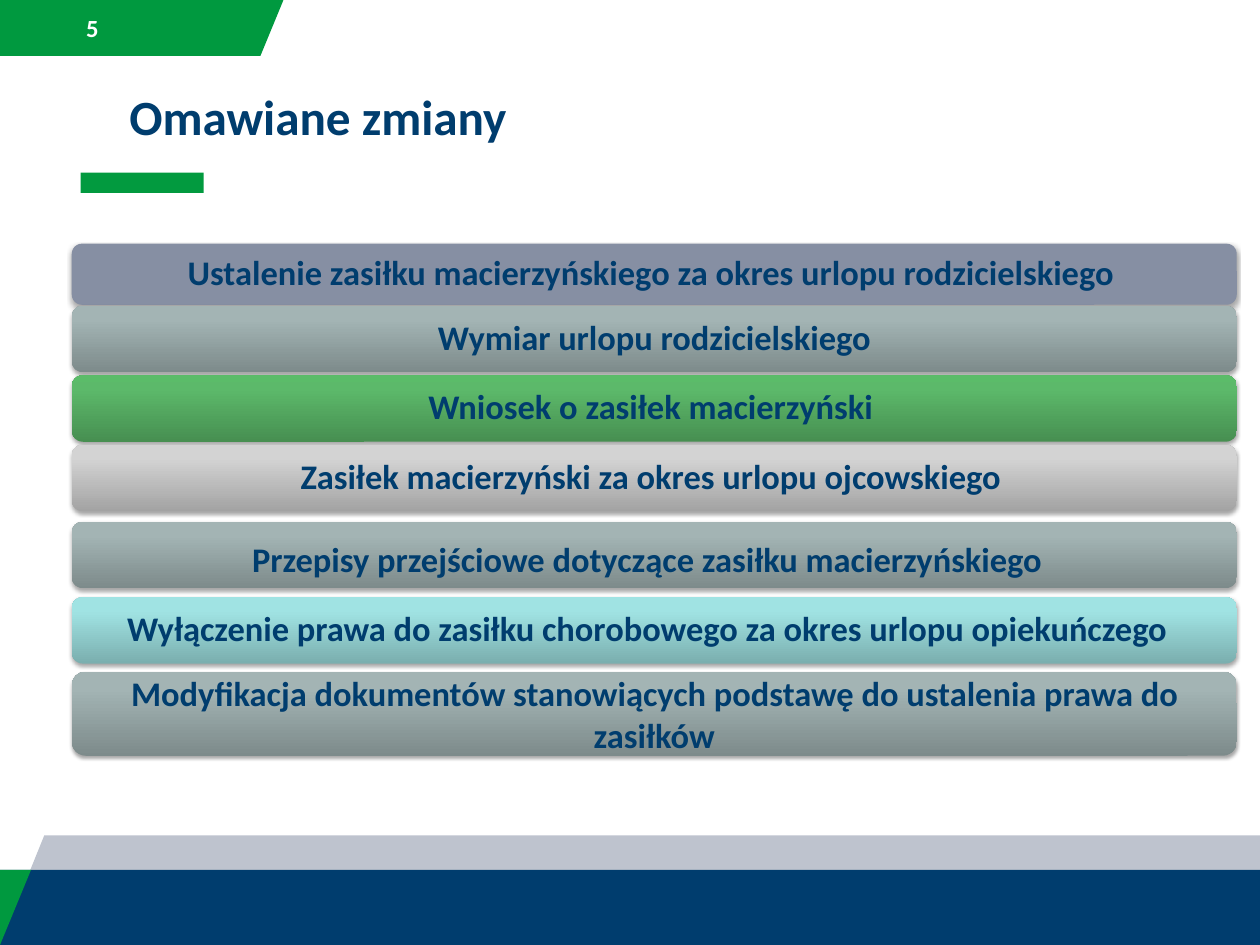
from lxml.etree import SubElement
from pptx import Presentation
from pptx.dml.color import RGBColor
from pptx.enum.shapes import MSO_SHAPE
from pptx.enum.text import MSO_ANCHOR, MSO_AUTO_SIZE, PP_ALIGN
from pptx.oxml.ns import qn
from pptx.util import Pt

# Content
WIDTH, HEIGHT = 1024, 768
TITLE, NUMBER = "Omawiane zmiany", "5"
NAVY, GREEN, GREY = "003D6E", "00993F", "BEC3CE"

# Gradient stops run from the bottom edge up to the top edge
STOPS = (0, 80, 100)
SLATE = ("7D8B8B", "A3B4B4", "A3B6B6")
LEAF = ("478F51", "5CB96A", "5BBC69")
SILVER = ("A3A3A3", "D3D3D3", "D4D4D4")
AQUA = ("7BAFAF", "A0E3E3", "9FE5E5")

# Text, colours, top, height, line spacing, extra top inset, extra right inset
BARS = [
    ("Ustalenie zasiłku macierzyńskiego za okres urlopu rodzicielskiego",
     ("868FA3",), 198, 49.7, 0.9, 0, 6),
    ("Wymiar urlopu rodzicielskiego", SLATE, 248.5, 54, 0.9, 0, 0),
    ("Wniosek o zasiłek macierzyński", LEAF, 305, 54, 0.9, 0, 6),
    ("Zasiłek macierzyński za okres urlopu ojcowskiego",
     SILVER, 361.5, 54, 0.9, 0, 6),
    ("Przepisy przejściowe dotyczące zasiłku macierzyńskiego",
     SLATE, 424, 54, 1, 6, 12),
    ("Wyłączenie prawa do zasiłku chorobowego za okres urlopu opiekuńczego",
     AQUA, 485.3, 54, 0.9, 0, 12),
    ("Modyfikacja dokumentów stanowiących podstawę do ustalenia prawa do "
     "zasiłków", SLATE, 545.8, 68.4, 1, 0, 0),
]
BAR_LEFT, BAR_WIDTH, INSET = 58.3, 946.8, 11

# Corner points of the slanted shapes
HEADER = [(0, 0), (230.4, 0), (211.7, 45.4), (0, 45.4)]
BAND = [(0, HEIGHT), (36, 679), (WIDTH, 679), (WIDTH, HEIGHT)]
WEDGE = [(0, 707), (25.2, 707), (0, HEIGHT)]


def color(text):
    return RGBColor.from_string(text)


def paint(shape, tone):
    shape.shadow.inherit = False
    shape.fill.solid()
    shape.fill.fore_color.rgb = color(tone)
    shape.line.fill.background()
    return shape


def slant(points, tone):
    pen = slide.shapes.build_freeform(
        Pt(points[0][0]), Pt(points[0][1]), scale=1.0)
    pen.add_line_segments([(Pt(x), Pt(y)) for x, y in points[1:]], close=True)
    return paint(pen.convert_to_shape(), tone)


def block(kind, box, tone):
    return paint(slide.shapes.add_shape(kind, *map(Pt, box)), tone)


def write(shape, text, size, tone, align, anchor, insets, spacing=1):
    frame = shape.text_frame
    frame.text = text
    para = frame.paragraphs[0]
    left, top, right, bottom = map(Pt, insets)
    looks = [
        (frame, {"word_wrap": True, "auto_size": MSO_AUTO_SIZE.NONE,
                 "vertical_anchor": anchor, "margin_left": left,
                 "margin_top": top, "margin_right": right,
                 "margin_bottom": bottom}),
        (para, {"alignment": align, "line_spacing": spacing,
                "space_before": Pt(0)}),
        (para.runs[0].font, {"name": "Calibri", "size": Pt(size),
                             "bold": True}),
    ]
    for part, values in looks:
        for name, value in values.items():
            setattr(part, name, value)
    para.runs[0].font.color.rgb = color(tone)


def shade(shape, tones):
    shape.fill.gradient()
    grad = shape.element.spPr.find(qn("a:gradFill"))
    stops = grad.find(qn("a:gsLst"))
    for stop in list(stops):
        stops.remove(stop)
    for place, tone in zip(STOPS, tones):
        stop = SubElement(stops, qn("a:gs"), pos=str(place * 1000))
        SubElement(stop, qn("a:srgbClr"), val=tone)
    grad.find(qn("a:lin")).set("ang", str(270 * 60000))


def drop(shape):
    effects = shape.element.spPr.find(qn("a:effectLst"))
    cast = SubElement(effects, qn("a:outerShdw"), blurRad=str(Pt(3.1)),
                      dist=str(Pt(1.8)), dir=str(90 * 60000), rotWithShape="0")
    tint = SubElement(cast, qn("a:srgbClr"), val="000000")
    SubElement(tint, qn("a:alpha"), val="35000")


deck = Presentation()
deck.slide_width, deck.slide_height = Pt(WIDTH), Pt(HEIGHT)
slide = deck.slides.add_slide(deck.slide_layouts[5])

# Header and footer
slant(HEADER, GREEN)
slant(BAND, GREY)
block(MSO_SHAPE.RECTANGLE, (0, 707, WIDTH, HEIGHT - 707), NAVY)
slant(WEDGE, GREEN)
block(MSO_SHAPE.RECTANGLE, (65.5, 140.4, 100, 16.5), "029A3F")
number = slide.shapes.add_textbox(Pt(65.5), Pt(6.5), Pt(61), Pt(32.4))
write(number, NUMBER, 20, "FFFFFF", PP_ALIGN.LEFT, MSO_ANCHOR.MIDDLE, [4.5] * 4)

# Title
title = slide.shapes.title
title.left, title.top, title.width, title.height = map(
    Pt, (98, 66.2, 850, 67.7))
write(title, TITLE, 40, NAVY, PP_ALIGN.LEFT, MSO_ANCHOR.TOP,
      (7.2, 3.6, 7.2, 3.6))

# Bars
for text, tones, top, height, spacing, lower, shift in BARS:
    bar = block(MSO_SHAPE.ROUNDED_RECTANGLE,
                (BAR_LEFT, top, BAR_WIDTH, height), tones[0])
    if len(tones) > 1:
        shade(bar, tones)
    drop(bar)
    write(bar, text, 28, NAVY, PP_ALIGN.CENTER, MSO_ANCHOR.MIDDLE,
          (INSET, lower, INSET + shift, 0), spacing)

deck.save("out.pptx")
